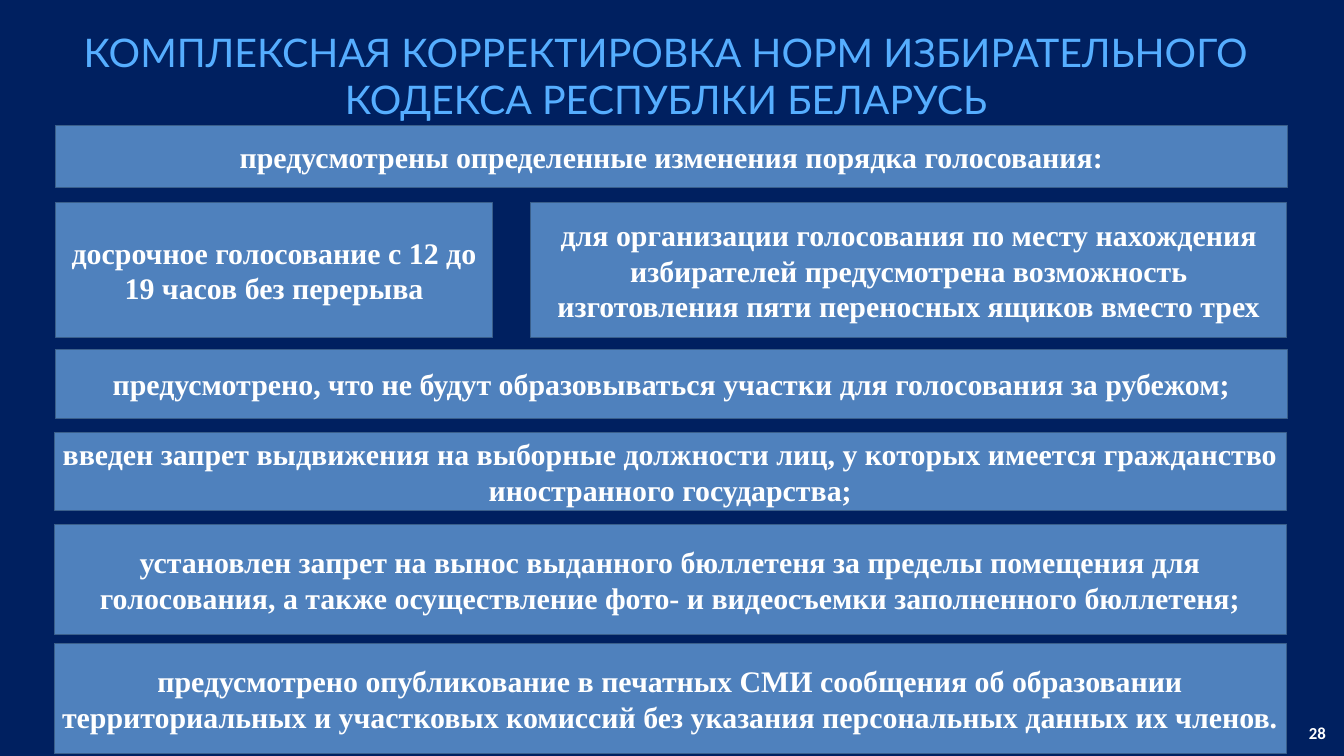
from pptx import Presentation
from pptx.dml.color import RGBColor
from pptx.enum.shapes import MSO_SHAPE
from pptx.enum.text import MSO_ANCHOR, PP_ALIGN
from pptx.util import Inches, Pt

COLORS = {
    "background": "002060",
    "title": "56AEFF",
    "panel": "4F81BD",
    "border": "3A5F8B",
    "text": "FFFFFF",
}
LEFT, LOWER_LEFT, FULL_WIDTH = 0.83, 0.81, 18.33

PANELS = [
    (LEFT, 1.87, FULL_WIDTH, 0.92,
     "предусмотрены определенные изменения порядка голосования:"),
    (LEFT, 3.02, 6.5, 2,
     "досрочное голосование с 12 до 19 часов без перерыва"),
    (7.9, 3.02, 11.25, 2,
     "для организации голосования по месту нахождения избирателей предусмотрена "
     "возможность изготовления пяти переносных ящиков вместо трех"),
    (LEFT, 5.2, FULL_WIDTH, 1.03,
     "предусмотрено, что не будут образовываться участки для голосования за рубежом;"),
    (LOWER_LEFT, 6.44, FULL_WIDTH, 1.15,
     "введен запрет выдвижения на выборные должности лиц, у которых имеется "
     "гражданство иностранного государства;"),
    (LOWER_LEFT, 7.8, FULL_WIDTH, 1.64,
     "установлен запрет на вынос выданного бюллетеня за пределы помещения для "
     "голосования, а также осуществление фото- и видеосъемки заполненного бюллетеня;"),
    (LOWER_LEFT, 9.58, FULL_WIDTH, 1.64,
     "предусмотрено опубликование в печатных СМИ сообщения об образовании "
     "территориальных и участковых комиссий без указания персональных данных их членов."),
]


def color(name):
    return RGBColor.from_string(COLORS[name])


class PageBuilder:
    """Holds the text styles and the page being filled."""

    styles = {
        "title": {"name": "Lato", "size": Pt(42.2), "bold": False},
        "panel": {"name": "Times New Roman", "size": Pt(32), "bold": True},
        "number": {"name": "Calibri", "size": Pt(18), "bold": True},
    }

    def __init__(self, page):
        self.page = page
        page.background.fill.solid()
        page.background.fill.fore_color.rgb = color("background")

    def add_text(self, shape, text, style, ink="text", align=PP_ALIGN.CENTER,
                 anchor=MSO_ANCHOR.MIDDLE):
        frame = shape.text_frame
        frame.word_wrap = True
        frame.vertical_anchor = anchor
        para = frame.paragraphs[0]
        para.alignment = align
        span = para.add_run()
        span.text = text
        for attribute, value in self.styles[style].items():
            setattr(span.font, attribute, value)
        span.font.color.rgb = color(ink)
        return para

    def add_title(self, place, text):
        box = self.page.shapes.add_textbox(*map(Inches, place))
        for side in ("left", "top", "right", "bottom"):
            setattr(box.text_frame, f"margin_{side}", 0)
        para = self.add_text(box, text, "title", "title", anchor=MSO_ANCHOR.TOP)
        para.line_spacing = Pt(50.6)

    def add_panel(self, place, text):
        panel = self.page.shapes.add_shape(MSO_SHAPE.RECTANGLE, *map(Inches, place))
        panel.shadow.inherit = False
        panel.fill.solid()
        panel.fill.fore_color.rgb = color("panel")
        panel.line.color.rgb = color("border")
        panel.line.width = Pt(1)
        self.add_text(panel, text, "panel")

    def add_number(self, place, text):
        box = self.page.shapes.add_textbox(*map(Inches, place))
        self.add_text(box, text, "number", align=PP_ALIGN.RIGHT)


def main():
    deck = Presentation()
    deck.slide_width, deck.slide_height = Inches(20), Inches(11.25)
    builder = PageBuilder(deck.slides.add_slide(deck.slide_layouts[6]))

    builder.add_number((17.5, 10.71, 2.33, 0.4), "28")
    builder.add_title((0, 0.42, 19.83, 1.41),
                      "КОМПЛЕКСНАЯ КОРРЕКТИРОВКА НОРМ ИЗБИРАТЕЛЬНОГО "
                      "КОДЕКСА РЕСПУБЛКИ БЕЛАРУСЬ")
    for *place, text in PANELS:
        builder.add_panel(place, text)

    deck.save("out.pptx")


if __name__ == "__main__":
    main()
